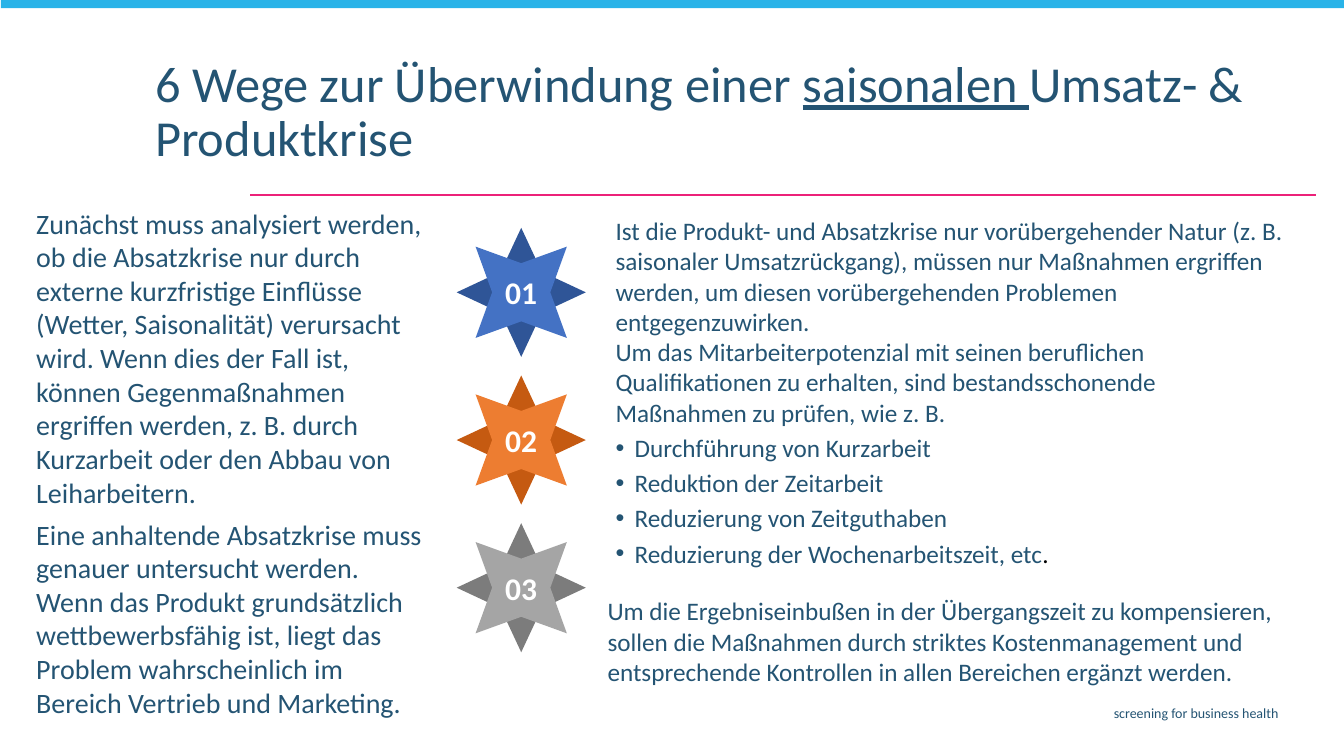
"""Build the slide on ways out of a seasonal sales and product crisis."""
from dataclasses import dataclass

from lxml.etree import SubElement
from pptx import Presentation
from pptx.dml.color import RGBColor as Color
from pptx.enum.shapes import MSO_CONNECTOR as Connector, MSO_SHAPE as Preset
from pptx.enum.text import MSO_ANCHOR as Anchor, MSO_AUTO_SIZE as AutoSize, PP_ALIGN as Align
from pptx.oxml.ns import qn
from pptx.shapes.autoshape import Shape
from pptx.slide import Slide
from pptx.text.text import TextFrame, _Paragraph as Paragraph, _Run as Run
from pptx.util import Pt


@dataclass(frozen=True)
class Theme:
    font: str = "Calibri"
    ink: str = "245473"
    bar: str = "29B3E8"
    rule: str = "EC2179"
    white: str = "FFFFFF"
    black: str = "000000"
    title_size: float = 36
    lead_size: float = 20
    body_size: float = 18
    badge_size: float = 22.5
    footer_size: float = 10


@dataclass(frozen=True)
class Area:
    left: float
    top: float
    width: float
    height: float


@dataclass(frozen=True)
class Badge:
    label: str
    back: str
    front: str


@dataclass(frozen=True)
class TextBlock:
    area: Area
    paragraphs: tuple[str, ...]
    size: float
    gap: float = 0
    inset: tuple[float, float] = (2.7, 1.35)
    align: Align = Align.LEFT
    bullets_from: int = 99


THEME = Theme()
STAR_LEFT, STAR_TOP, STAR_SIZE, STAR_PITCH = 326.2, 162.7, 92.2, 105.5
BULLET_INDENT = 13.7

BADGES = (
    Badge("01", "2F5597", "4472C4"),
    Badge("02", "C55A11", "ED7D31"),
    Badge("03", "7C7C7C", "A5A5A5"),
)

FOOTER = TextBlock(
    Area(262.8, 499.7, 657.4, 20.9), ("screening for business health",),
    THEME.footer_size, inset=(7.2, 3.6), align=Align.RIGHT,
)
ANALYSIS = TextBlock(
    Area(19.4, 144, 293.8, 406), (
        "Zunächst muss analysiert werden, ob die Absatzkrise nur durch externe kurzfristige "
        "Einflüsse (Wetter, Saisonalität) verursacht wird. Wenn dies der Fall ist, können "
        "Gegenmaßnahmen ergriffen werden, z. B. durch Kurzarbeit oder den Abbau von Leiharbeitern.",
        "Eine anhaltende Absatzkrise muss genauer untersucht werden. Wenn das Produkt "
        "grundsätzlich wettbewerbsfähig ist, liegt das Problem wahrscheinlich im Bereich "
        "Vertrieb und Marketing.",
    ), THEME.lead_size, gap=6, inset=(6.5, 3.2),
)
TEMPORARY = TextBlock(
    Area(437, 152.6, 503.3, 68.4), (
        "Ist die Produkt- und Absatzkrise nur vorübergehender Natur (z. B. saisonaler "
        "Umsatzrückgang), müssen nur Maßnahmen ergriffen werden, um diesen vorübergehenden "
        "Problemen entgegenzuwirken.",
    ), THEME.body_size,
)
MEASURES = TextBlock(
    Area(437, 239, 486, 172.8), (
        "Um das Mitarbeiterpotenzial mit seinen beruflichen Qualifikationen zu erhalten, sind "
        "bestandsschonende Maßnahmen zu prüfen, wie z. B.",
        "Durchführung von Kurzarbeit",
        "Reduktion der Zeitarbeit",
        "Reduzierung von Zeitguthaben",
        "Reduzierung der Wochenarbeitszeit, etc",
    ), THEME.body_size, gap=3.6, bullets_from=1,
)
COST_CONTROL = TextBlock(
    Area(431.3, 424.1, 491.8, 68.4), (
        "Um die Ergebniseinbußen in der Übergangszeit zu kompensieren, sollen die Maßnahmen "
        "durch striktes Kostenmanagement und entsprechende Kontrollen in allen Bereichen "
        "ergänzt werden.",
    ), THEME.body_size,
)


def place(shape: Shape, area: Area) -> None:
    shape.left, shape.top = Pt(area.left), Pt(area.top)
    shape.width, shape.height = Pt(area.width), Pt(area.height)


def style_run(span: Run, size: float, color: str = THEME.ink, bold: bool = False) -> None:
    span.font.name = THEME.font
    span.font.size = Pt(size)
    span.font.bold = bold
    span.font.color.rgb = Color.from_string(color)


def add_span(para: Paragraph, text: str, size: float, color: str = THEME.ink) -> Run:
    span = para.add_run()
    span.text = text
    style_run(span, size, color)
    return span


def add_bullet(para: Paragraph) -> None:
    properties = para._p.get_or_add_pPr()
    properties.set("marL", str(Pt(BULLET_INDENT)))
    properties.set("indent", str(-Pt(BULLET_INDENT)))
    SubElement(properties, qn("a:buFont")).set("typeface", "Arial")
    SubElement(properties, qn("a:buChar")).set("char", "•")


def add_text(slide: Slide, block: TextBlock) -> TextFrame:
    area = block.area
    box = slide.shapes.add_textbox(Pt(area.left), Pt(area.top), Pt(area.width), Pt(area.height))
    frame = box.text_frame
    frame.word_wrap = True
    frame.margin_left = frame.margin_right = Pt(block.inset[0])
    frame.margin_top = frame.margin_bottom = Pt(block.inset[1])
    frame.text = "\n".join(block.paragraphs)
    for index, para in enumerate(frame.paragraphs):
        para.alignment = block.align
        if index:
            para.space_before = Pt(block.gap)
        if index >= block.bullets_from:
            add_bullet(para)
        style_run(para.runs[0], block.size)
    return frame


def add_filled(slide: Slide, preset: Preset, area: Area, color: str) -> Shape:
    shape = slide.shapes.add_shape(preset, 0, 0, 0, 0)
    place(shape, area)
    shape.shadow.inherit = False
    shape.fill.solid()
    shape.fill.fore_color.rgb = Color.from_string(color)
    shape.line.fill.background()
    return shape


def add_badge(slide: Slide, badge: Badge, top: float) -> None:
    area = Area(STAR_LEFT, top, STAR_SIZE, STAR_SIZE)
    for color, angle in ((badge.back, 0), (badge.front, 45)):
        star = add_filled(slide, Preset.STAR_4_POINT, area, color)
        star.adjustments[0] = 0.225
        star.rotation = angle
    label_area = Area(STAR_LEFT + 27.4, top + 28.8, 37.4, 34.6)
    frame = add_text(slide, TextBlock(label_area, (badge.label,), THEME.badge_size,
                                      inset=(7.2, 3.6), align=Align.CENTER))
    frame.word_wrap = False
    frame.vertical_anchor = Anchor.MIDDLE
    style_run(frame.paragraphs[0].runs[0], THEME.badge_size, THEME.white, bold=True)


def add_rule(slide: Slide) -> None:
    rule = slide.shapes.add_connector(Connector.STRAIGHT, Pt(178.6), Pt(139), Pt(940.3), Pt(139))
    rule.line.color.rgb = Color.from_string(THEME.rule)
    rule.line.width = Pt(1.5)
    SubElement(rule._element.spPr, qn("a:effectLst"))


def fill_title(slide: Slide) -> None:
    title = slide.shapes.title
    place(title, Area(103.7, 38.2, 794.2, 72.7))
    frame = title.text_frame
    frame.word_wrap = True
    frame.auto_size = AutoSize.NONE
    frame.vertical_anchor = Anchor.TOP
    para = frame.paragraphs[0]
    para.alignment = Align.LEFT
    para.line_spacing = 0.9
    add_span(para, "6 Wege zur Überwindung einer ", THEME.title_size)
    add_span(para, "saisonalen ", THEME.title_size).font.underline = True
    add_span(para, "Umsatz- & Produktkrise", THEME.title_size)


def main() -> None:
    deck = Presentation()
    deck.slide_width, deck.slide_height = Pt(960), Pt(540)
    slide = deck.slides.add_slide(deck.slide_layouts[5])
    fill_title(slide)
    add_rule(slide)
    add_filled(slide, Preset.RECTANGLE, Area(0.7, 0, 959.3, 5.8), THEME.bar)
    for index, badge in enumerate(BADGES):
        add_badge(slide, badge, STAR_TOP + index * STAR_PITCH)
    for block in (FOOTER, ANALYSIS, TEMPORARY, COST_CONTROL):
        add_text(slide, block)
    measures = add_text(slide, MEASURES)
    add_span(measures.paragraphs[-1], ".", THEME.body_size, THEME.black)
    deck.save("out.pptx")


if __name__ == "__main__":
    main()
